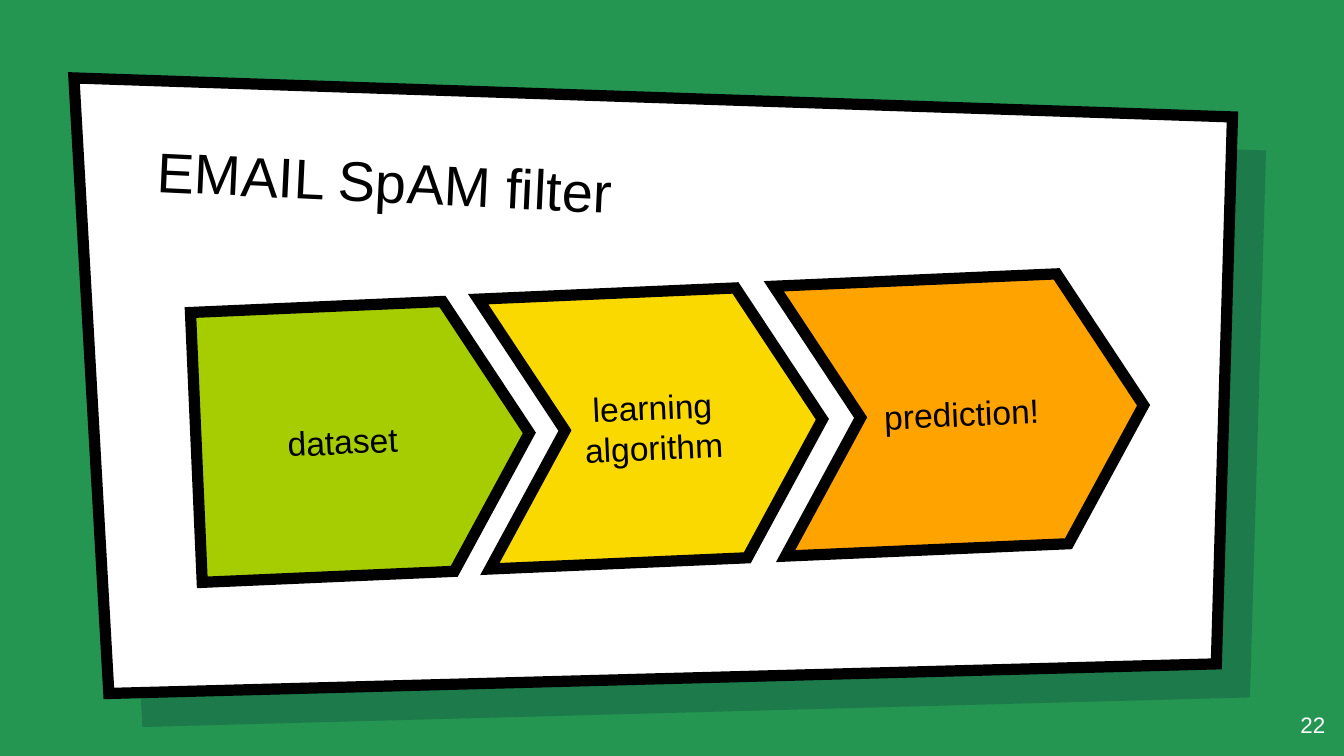
from dataclasses import dataclass

from lxml.etree import SubElement
from pptx import Presentation
from pptx.dml.color import RGBColor
from pptx.enum.shapes import MSO_SHAPE as Preset
from pptx.enum.text import MSO_ANCHOR as Anchor, MSO_AUTO_SIZE as AutoSize, PP_ALIGN as Align
from pptx.oxml.ns import qn
from pptx.util import Inches, Pt

COLORS = {
    "background": "249651", "shadow": "001936", "white": "FFFFFF", "black": "000000",
    "dataset": "A6CD02", "learning": "FAD900", "prediction": "FFA300",
}
WIDTH = Inches(10)
HEIGHT = WIDTH * 9 // 16
FONT = "Arial"

# All lengths are percentages of the slide's width or height
CARD_CORNERS = [(5.5, 10.31), (91.7, 15.47), (90.5, 87.82), (8.1, 91.73)]
SHADOW_SHIFT = (2.5, 4.44)
STEP_TOP, STEP_RISE, STEP_HEIGHT = 40.36, 1.78, 35.73


@dataclass
class Step:
    label: str
    preset: Preset
    color: str
    left: float
    width: float


STEPS = [
    Step("dataset", Preset.PENTAGON, "dataset", 14.6, 24.8),
    Step("learning algorithm", Preset.CHEVRON, "learning", 36, 25.2),
    Step("prediction!", Preset.CHEVRON, "prediction", 58, 27.1),
]


def color(name: str) -> RGBColor:
    return RGBColor.from_string(COLORS[name])


def across(share: float) -> int:
    return round(WIDTH * share / 100)


def down(share: float) -> int:
    return round(HEIGHT * share / 100)


def box(left: float, top: float, width: float, height: float) -> tuple:
    return across(left), down(top), across(width), down(height)


def paint(shape, fill: str) -> None:
    shape.shadow.inherit = False
    shape.fill.solid()
    shape.fill.fore_color.rgb = color(fill)


def outline(shape) -> None:
    shape.line.color.rgb = color("black")
    shape.line.width = Pt(6)
    SubElement(shape.line._get_or_add_ln(), qn("a:miter"), lim="800000")


def write(shape, text: str, size: float, ink: str, align: Align, anchor: Anchor) -> None:
    frame = shape.text_frame
    frame.text = text
    frame.word_wrap = True
    frame.auto_size = AutoSize.NONE
    frame.vertical_anchor = anchor
    frame.margin_left = frame.margin_right = Inches(0.1)
    frame.margin_top = frame.margin_bottom = Inches(0.1)
    paragraph = frame.paragraphs[0]
    paragraph.alignment = align
    font = paragraph.runs[0].font
    font.name, font.size, font.color.rgb = FONT, Pt(size), color(ink)


def add_card(slide, fill: str, shift: tuple = (0, 0)):
    points = [(across(x + shift[0]), down(y + shift[1])) for x, y in CARD_CORNERS]
    builder = slide.shapes.build_freeform(*points[0])
    builder.add_line_segments(points[1:], close=True)
    card = builder.convert_to_shape()
    paint(card, fill)
    return card


def add_step(slide, step: Step, index: int) -> None:
    top = STEP_TOP - index * STEP_RISE
    shape = slide.shapes.add_shape(step.preset, *box(step.left, top, step.width, STEP_HEIGHT))
    shape.adjustments[0] = 0.3
    shape.rotation = 357.5
    paint(shape, step.color)
    outline(shape)
    write(shape, step.label, 18, "black", Align.CENTER, Anchor.MIDDLE)


def main() -> None:
    presentation = Presentation()
    presentation.slide_width, presentation.slide_height = WIDTH, HEIGHT
    slide = presentation.slides.add_slide(presentation.slide_layouts[5])
    slide.background.fill.solid()
    slide.background.fill.fore_color.rgb = color("background")

    # Tilted card and its see-through shadow
    shadow = add_card(slide, "shadow", SHADOW_SHIFT)
    shadow.line.fill.background()
    shadow_color = shadow.fill._xPr.find(qn("a:solidFill"))[0]
    SubElement(shadow_color, qn("a:alpha"), val="22000")
    outline(add_card(slide, "white"))

    # Title, brought in front of the card
    title = slide.shapes.title
    title.left, title.top, title.width, title.height = box(10.7, 17.07, 76.9, 14.76)
    title.rotation = 2.7
    write(title, "EMAIL SpAM filter", 30, "black", Align.LEFT, Anchor.BOTTOM)
    slide.shapes._spTree.append(title._element)

    # Process steps
    for index, step in enumerate(STEPS):
        add_step(slide, step, index)

    # Slide number
    number = slide.shapes.add_textbox(*box(93.6, 92.27, 6, 7.64))
    write(number, "22", 12, "white", Align.RIGHT, Anchor.TOP)

    presentation.save("out.pptx")


if __name__ == "__main__":
    main()
